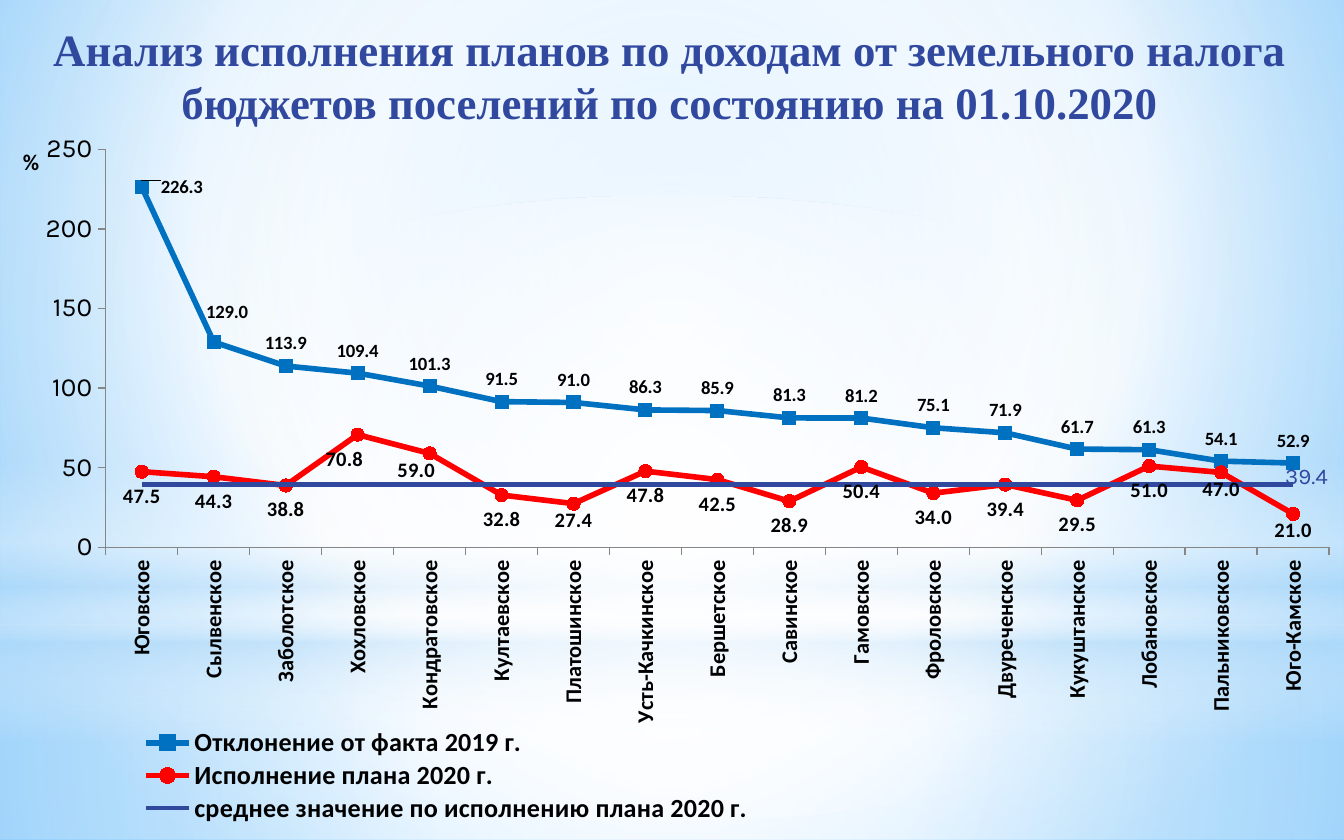
from lxml.etree import SubElement
from pptx import Presentation
from pptx.chart.data import CategoryChartData
from pptx.dml.color import RGBColor
from pptx.enum.chart import XL_CHART_TYPE as ChartType, XL_LABEL_POSITION as LabelPosition
from pptx.enum.chart import XL_LEGEND_POSITION as LegendPosition, XL_MARKER_STYLE as Marker
from pptx.enum.chart import XL_TICK_MARK as TickMark
from pptx.enum.shapes import MSO_SHAPE as Shape
from pptx.enum.text import MSO_ANCHOR as Anchor, PP_ALIGN as Align
from pptx.oxml import parse_xml
from pptx.oxml.ns import nsdecls, qn
from pptx.util import Inches, Pt

# Content
TITLE = ("Анализ исполнения планов по доходам от земельного налога "
         "бюджетов поселений по состоянию на 01.10.2020")
SETTLEMENTS = [
    "Юговское", "Сылвенское", "Заболотское", "Хохловское", "Кондратовское", "Култаевское",
    "Платошинское", "Усть-Качкинское", "Бершетское", "Савинское", "Гамовское", "Фроловское",
    "Двуреченское", "Кукуштанское", "Лобановское", "Пальниковское", "Юго-Камское"]
AVERAGE = 39.4
COLORS = {"title": "31489F", "fact": "0070C0", "plan": "FF0000", "average": "31489F",
          "text": "000000", "axis": "868686"}
# "moved" holds label offsets as shares of the chart's width and height
SERIES = [
    dict(name="Отклонение от факта 2019 г.", color="fact", width=3, marker=Marker.SQUARE,
         values=[226.3, 129, 113.9, 109.4, 101.3, 91.5, 91, 86.3, 85.9, 81.3, 81.2, 75.1,
                 71.9, 61.7, 61.3, 54.1, 52.9],
         position=LabelPosition.ABOVE, label=dict(size=10, bold=True),
         moved={0: (0.03, 0.03), 1: (0.01, -0.01)}),
    dict(name="Исполнение плана 2020 г.", color="plan", width=3, marker=Marker.CIRCLE,
         values=[47.5, 44.3, 38.8, 70.8, 59, 32.8, 27.4, 47.8, 42.5, 28.9, 50.4, 34,
                 39.4, 29.5, 51, 47, 21],
         position=LabelPosition.BELOW, label=dict(size=11, bold=True),
         moved={3: (-0.01, 0), 4: (-0.01, -0.01), 6: (0, -0.01), 15: (0, -0.01),
                16: (0, -0.01)}),
    dict(name="среднее значение по исполнению плана 2020 г.", color="average", width=2.25,
         marker=Marker.NONE, values=[AVERAGE] * len(SETTLEMENTS),
         position=LabelPosition.CENTER, label=dict(size=12, font="Karla", color="average"),
         moved={16: (0.01, -0.01)}, only_moved=True),
]

# Backdrop: (shape, top, height, direction, stops of position, colour, opacity)
CENTER = (50, 50, 50, 50)
BACKGROUND = ((20, 10, 20, 60), [(0, "9ED5FF", 100), (60, "FFFFFF", 100), (100, "5BB9FF", 100)])
BACKDROP = [
    (Shape.RECTANGLE, 4.65, 1.6, CENTER,
     [(0, "FFFFFF", 91), (37, "FFFFFF", 76), (100, "B4DCFA", 79)]),
    (Shape.RECTANGLE, 0, 4.65, CENTER,
     [(0, "FFFFFF", 89), (48, "FFFFFF", 62), (100, "B4DCFA", 79)]),
    (Shape.RECTANGLE, 3.43, 2.08, 90,
     [(0, "FFFFFF", 0), (29, "FFFFFF", 30), (45, "B4DCFA", 40), (55, "FFFFFF", 26),
      (65, "B4DCFA", 60), (100, "FFFFFF", 0)]),
    (Shape.OVAL, 1.46, 4.65, CENTER, [(0, "FFFFFF", 100), (56, "FFFFFF", 0)]),
]
WIDTH, HEIGHT = 10, 6.25


def gradient(direction, stops):
    """Linear for an angle, circular for a (left, top, right, bottom) focus."""
    marks = "".join(
        f'<a:gs pos="{position * 1000}"><a:srgbClr val="{color}">'
        f'<a:alpha val="{opacity * 1000}"/></a:srgbClr></a:gs>'
        for position, color, opacity in stops)
    if isinstance(direction, tuple):
        focus = " ".join(f'{side}="{share * 1000}"' for side, share in zip("ltrb", direction))
        course = f'<a:path path="circle"><a:fillToRect {focus}/></a:path>'
    else:
        course = f'<a:lin ang="{direction * 60000}" scaled="0"/>'
    return parse_xml(f'<a:gradFill {nsdecls("a")} rotWithShape="1">'
                     f'<a:gsLst>{marks}</a:gsLst>{course}</a:gradFill>')


def style(font, size, bold=False, font_name="Calibri", color="text"):
    font.size, font.bold, font.name = Pt(size), bold, font_name
    font.color.rgb = RGBColor.from_string(COLORS[color])


def add_text(slide, text, box, size, **look):
    shape = slide.shapes.add_textbox(*map(Inches, box))
    frame = shape.text_frame
    frame.word_wrap, frame.vertical_anchor = True, Anchor.TOP
    paragraph = frame.paragraphs[0]
    paragraph.alignment = Align.CENTER
    run = paragraph.add_run()
    run.text = text
    style(run.font, size, **look)


def manual_layout(**settings):
    layout = parse_xml(f'<c:layout {nsdecls("c")}><c:manualLayout/></c:layout>')
    for name, value in settings.items():
        SubElement(layout[0], qn(f"c:{name}")).set("val", str(value))
    return layout


def place(element, after, **settings):
    """Give a chart part a manual layout, right after the named child."""
    for old in element.findall(qn("c:layout")):
        element.remove(old)
    layout = manual_layout(**settings)
    if after is None:
        element.insert(0, layout)
    else:
        element.find(qn(after)).addnext(layout)


def format_series(series, item):
    color = RGBColor.from_string(COLORS[item["color"]])
    series.smooth = False
    series.format.line.color.rgb = color
    series.format.line.width = Pt(item["width"])
    series.marker.style = item["marker"]
    if item["marker"] != Marker.NONE:
        series.marker.size = 7
        series.marker.format.fill.solid()
        series.marker.format.fill.fore_color.rgb = color
        series.marker.format.line.color.rgb = color
    look = dict(item["label"])
    look["font_name"] = look.pop("font", "Calibri")
    labels = series.data_labels
    labels.show_value = not item.get("only_moved", False)
    labels.number_format, labels.number_format_is_linked = "#,##0.0", False
    labels.position = item["position"]
    style(labels.font, **look)
    for index, (x, y) in item["moved"].items():
        label = series.points[index].data_label
        style(label.font, **look)
        label.position = item["position"]
    for element in series._element.iter(qn("c:dLbl")):
        x, y = item["moved"][int(element.find(qn("c:idx")).get("val"))]
        place(element, "c:idx", x=x, y=y)


def format_axes(chart):
    category, value = chart.category_axis, chart.value_axis
    for axis in (category, value):
        axis.major_tick_mark, axis.minor_tick_mark = TickMark.OUTSIDE, TickMark.NONE
        axis.has_major_gridlines = False
        axis.format.line.color.rgb = RGBColor.from_string(COLORS["axis"])
    style(category.tick_labels.font, 12, bold=True)
    category._element.find(qn("c:txPr")).find(qn("a:bodyPr")).set("rot", "-5400000")
    style(value.tick_labels.font, 14, font_name="Karla")
    value.tick_labels.number_format = "#,##0"
    value.tick_labels.number_format_is_linked = False
    value.minimum_scale, value.maximum_scale, value.major_unit = 0, 250, 50
    frame = value.axis_title.text_frame
    frame.text = "%"
    style(frame.paragraphs[0].runs[0].font, 12, bold=True)
    title = value._element.find(qn("c:title"))
    title.find(f'.//{qn("a:bodyPr")}').set("rot", "0")
    place(title, "c:tx", xMode="edge", yMode="edge", x=0.01, y=0.08)


def add_line_chart(slide, box):
    data = CategoryChartData(number_format="#,##0.0")
    data.categories = SETTLEMENTS
    for item in SERIES:
        data.add_series(item["name"], item["values"])
    chart = slide.shapes.add_chart(ChartType.LINE_MARKERS, *map(Inches, box), data).chart
    chart.has_title = False
    style(chart.font, 18, font_name="Karla")
    plot = chart.plots[0]
    plot.vary_by_categories = False
    for series, item in zip(plot.series, SERIES):
        format_series(series, item)
    format_axes(chart)
    chart.has_legend = True
    legend = chart.legend
    legend.position, legend.include_in_layout = LegendPosition.BOTTOM, False
    style(legend.font, 14, bold=True)
    place(legend._element, "c:legendPos", xMode="edge", yMode="edge", x=0.08, y=0.85, w=0.5, h=0.13)
    place(chart._chartSpace.chart.plotArea, None, layoutTarget="inner", xMode="edge",
          yMode="edge", x=0.075, y=0.089, w=0.914, h=0.525)


def main():
    presentation = Presentation()
    presentation.slide_width, presentation.slide_height = Inches(WIDTH), Inches(HEIGHT)
    slide = presentation.slides.add_slide(presentation.slide_layouts[6])

    # Background and its soft light
    slide.background.fill.solid()
    properties = slide._element.cSld.find(qn("p:bg")).find(qn("p:bgPr"))
    properties.replace(properties[0], gradient(*BACKGROUND))
    for kind, top, height, direction, stops in BACKDROP:
        shape = slide.shapes.add_shape(kind, 0, Inches(top), Inches(WIDTH), Inches(height))
        shape.shadow.inherit = False
        shape.line.fill.background()
        shape.fill.solid()
        solid = shape._element.spPr.find(qn("a:solidFill"))
        solid.getparent().replace(solid, gradient(direction, stops))

    # Title and chart
    add_text(slide, TITLE, (0, 0.11, 9.96, 0.52), 24, bold=True,
             font_name="Times New Roman", color="title")
    add_line_chart(slide, (0.04, 0.61, 9.96, 5.64))
    presentation.save("out.pptx")


if __name__ == "__main__":
    main()
